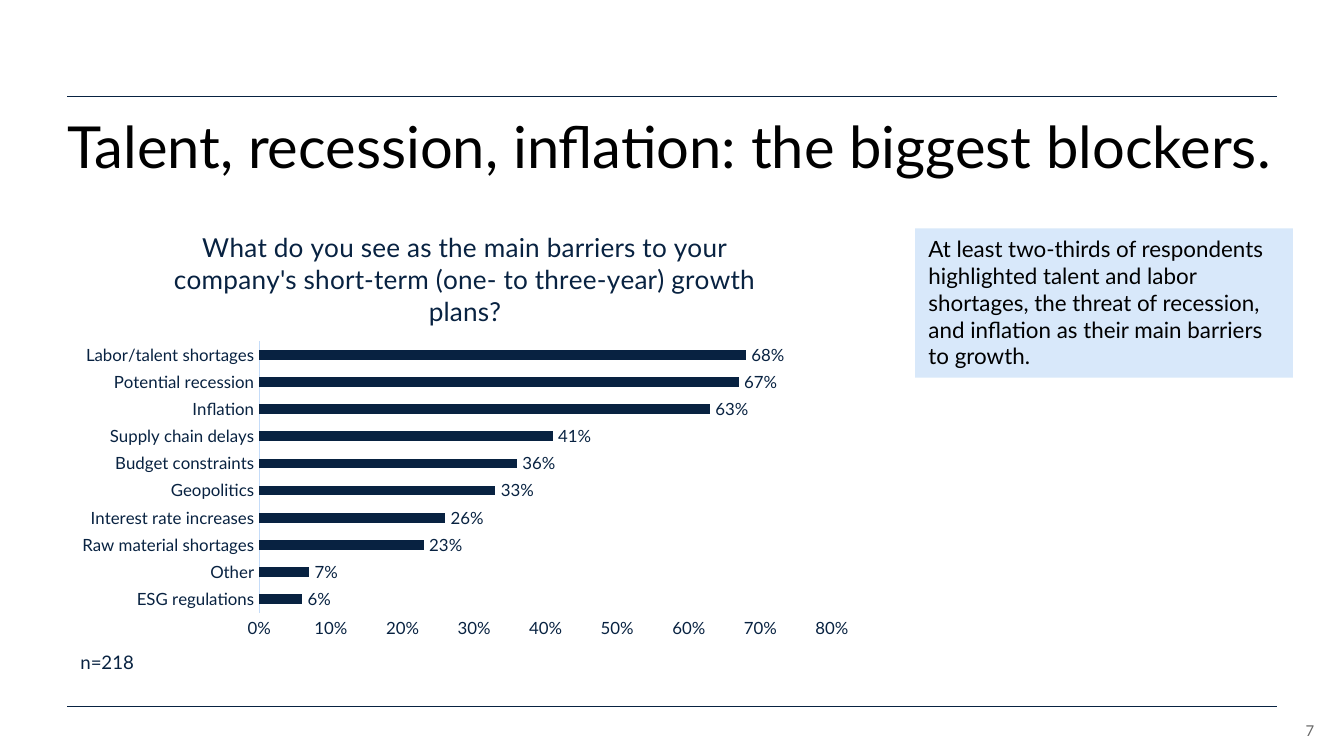
from dataclasses import dataclass
from typing import Optional

from lxml import etree
from pptx import Presentation
from pptx.chart.data import CategoryChartData
from pptx.dml.color import RGBColor
from pptx.enum.chart import XL_CHART_TYPE, XL_LABEL_POSITION, XL_TICK_MARK
from pptx.enum.shapes import MSO_CONNECTOR, MSO_SHAPE
from pptx.enum.text import MSO_ANCHOR, PP_ALIGN
from pptx.oxml.ns import qn
from pptx.util import Inches, Pt

BAR = XL_CHART_TYPE.BAR_CLUSTERED
OUTSIDE_END = XL_LABEL_POSITION.OUTSIDE_END
NO_TICK = XL_TICK_MARK.NONE
STRAIGHT = MSO_CONNECTOR.STRAIGHT
RECTANGLE = MSO_SHAPE.RECTANGLE
TOP, BOTTOM = MSO_ANCHOR.TOP, MSO_ANCHOR.BOTTOM
LEFT, RIGHT = PP_ALIGN.LEFT, PP_ALIGN.RIGHT

# Widescreen slide, 16 to 9
SLIDE_WIDTH = Inches(10)
SLIDE_HEIGHT = SLIDE_WIDTH * 9 // 16


@dataclass(frozen=True)
class Theme:
    font: str = "Lato"
    navy: str = "082241"
    black: str = "000000"
    gray: str = "666666"
    pale_blue: str = "D8E8FA"
    axis_blue: str = "C5DCF8"
    title: float = 31
    chart_title: float = 14
    body: float = 12
    note: float = 10
    label: float = 9
    page: float = 8


THEME = Theme()


@dataclass(frozen=True)
class TextBlock:
    text: str
    left: float
    top: float
    width: float
    height: float
    size: float
    color: str
    fill: Optional[str] = None
    padded: bool = True
    anchor: MSO_ANCHOR = TOP
    align: PP_ALIGN = LEFT
    line_spacing: float = 1.0


BLOCKS = [
    TextBlock("7", 9.31, 5.32, 0.47, 0.18, THEME.page, THEME.gray,
              padded=False, anchor=BOTTOM, align=RIGHT),
    TextBlock("Talent, recession, inflation: the biggest blockers.",
              0.5, 0.88, 9, 0.55, THEME.title, THEME.black,
              padded=False, line_spacing=0.9),
    TextBlock("At least two-thirds of respondents highlighted talent and labor "
              "shortages, the threat of recession, and inflation as their main "
              "barriers to growth.",
              6.81, 1.7, 2.81, 1.11, THEME.body, THEME.black, fill=THEME.pale_blue),
    TextBlock("n=218", 0.5, 4.79, 1.26, 0.27, THEME.note, THEME.navy),
]

RULE_HEIGHTS = (0.72, 5.26)

QUESTION = ("What do you see as the main barriers to your company's "
            "short-term (one- to three-year) growth plans?")
BARRIERS = {
    "ESG regulations": 0.06,
    "Other": 0.07,
    "Raw material shortages": 0.23,
    "Interest rate increases": 0.26,
    "Geopolitics": 0.33,
    "Budget constraints": 0.36,
    "Supply chain delays": 0.41,
    "Inflation": 0.63,
    "Potential recession": 0.67,
    "Labor/talent shortages": 0.68,
}
CHART_WIDTH, CHART_HEIGHT = 5.94, 3.28
# Plot area inside the chart frame, as fractions of its size
PLOT_LAYOUT = {"layoutTarget": "inner", "xMode": "edge", "yMode": "edge",
               "x": 1.44 / CHART_WIDTH, "y": 1 / CHART_HEIGHT,
               "w": 4.26 / CHART_WIDTH, "h": 2.02 / CHART_HEIGHT}


def set_values(target: object, values: dict) -> None:
    for name, value in values.items():
        setattr(target, name, value)


def style_font(font, size: float, color: str) -> None:
    set_values(font, {"name": THEME.font, "size": Pt(size), "bold": False})
    font.color.rgb = RGBColor.from_string(color)


def add_rule(slide, top: float) -> None:
    rule = slide.shapes.add_connector(STRAIGHT, Inches(0.5), Inches(top),
                                      Inches(9.5), Inches(top))
    rule.line.color.rgb = RGBColor.from_string(THEME.navy)
    rule.line.width = Pt(0.5)
    etree.SubElement(rule.element.spPr, qn("a:effectLst"))


def add_block(slide, block: TextBlock) -> None:
    place = [Inches(n) for n in (block.left, block.top, block.width, block.height)]
    if block.fill:
        box = slide.shapes.add_shape(RECTANGLE, *place)
        box.shadow.inherit = False
        box.fill.solid()
        box.fill.fore_color.rgb = RGBColor.from_string(block.fill)
        box.line.fill.background()
    else:
        box = slide.shapes.add_textbox(*place)
    frame = box.text_frame
    set_values(frame, {"word_wrap": True, "vertical_anchor": block.anchor})
    if not block.padded:
        set_values(frame, {f"margin_{side}": 0
                           for side in ("left", "top", "right", "bottom")})
    para = frame.paragraphs[0]
    set_values(para, {"alignment": block.align, "line_spacing": block.line_spacing})
    span = para.add_run()
    span.text = block.text
    style_font(span.font, block.size, block.color)


def set_plot_layout(chart) -> None:
    plot_area = chart.element.chart.plotArea
    for old_layout in plot_area.findall(qn("c:layout")):
        plot_area.remove(old_layout)
    layout = etree.Element(qn("c:layout"))
    plot_area.insert(0, layout)
    manual = etree.SubElement(layout, qn("c:manualLayout"))
    for name, value in PLOT_LAYOUT.items():
        etree.SubElement(manual, qn(f"c:{name}")).set("val", str(value))


def add_barrier_chart(slide) -> None:
    chart_data = CategoryChartData(number_format="0%")
    chart_data.categories = list(BARRIERS)
    chart_data.add_series("Series 1", list(BARRIERS.values()))
    chart = slide.shapes.add_chart(BAR, Inches(0.49), Inches(1.54),
                                   Inches(CHART_WIDTH), Inches(CHART_HEIGHT),
                                   chart_data).chart
    chart.has_legend = False
    style_font(chart.font, THEME.note, THEME.navy)

    # Question above the bars
    chart.has_title = True
    para = chart.chart_title.text_frame.paragraphs[0]
    span = para.add_run()
    span.text = QUESTION
    style_font(span.font, THEME.chart_title, THEME.navy)
    chart.chart_title.include_in_layout = False

    # Axes
    for axis in (chart.category_axis, chart.value_axis):
        set_values(axis, {"major_tick_mark": NO_TICK, "minor_tick_mark": NO_TICK,
                          "has_major_gridlines": False})
        style_font(axis.tick_labels.font, THEME.label, THEME.navy)
    category_line = chart.category_axis.format.line
    category_line.color.rgb = RGBColor.from_string(THEME.axis_blue)
    category_line.width = Pt(0.75)
    chart.value_axis.format.line.fill.background()
    set_values(chart.value_axis, {"minimum_scale": 0, "maximum_scale": 0.8,
                                  "major_unit": 0.1})
    number_format = {"number_format": "0%", "number_format_is_linked": False}
    set_values(chart.value_axis.tick_labels, number_format)

    # Bars and their values
    plot = chart.plots[0]
    set_values(plot, {"gap_width": 182, "vary_by_categories": False,
                      "has_data_labels": True})
    bar_fill = plot.series[0].format.fill
    bar_fill.solid()
    bar_fill.fore_color.rgb = RGBColor.from_string(THEME.navy)
    labels = plot.data_labels
    set_values(labels, {"show_value": True, "position": OUTSIDE_END, **number_format})
    style_font(labels.font, THEME.label, THEME.navy)
    set_plot_layout(chart)


def main() -> None:
    deck = Presentation()
    set_values(deck, {"slide_width": SLIDE_WIDTH, "slide_height": SLIDE_HEIGHT})
    slide = deck.slides.add_slide(deck.slide_layouts[6])
    for top in RULE_HEIGHTS:
        add_rule(slide, top)
    for block in BLOCKS:
        add_block(slide, block)
    add_barrier_chart(slide)
    deck.save("out.pptx")


if __name__ == "__main__":
    main()
